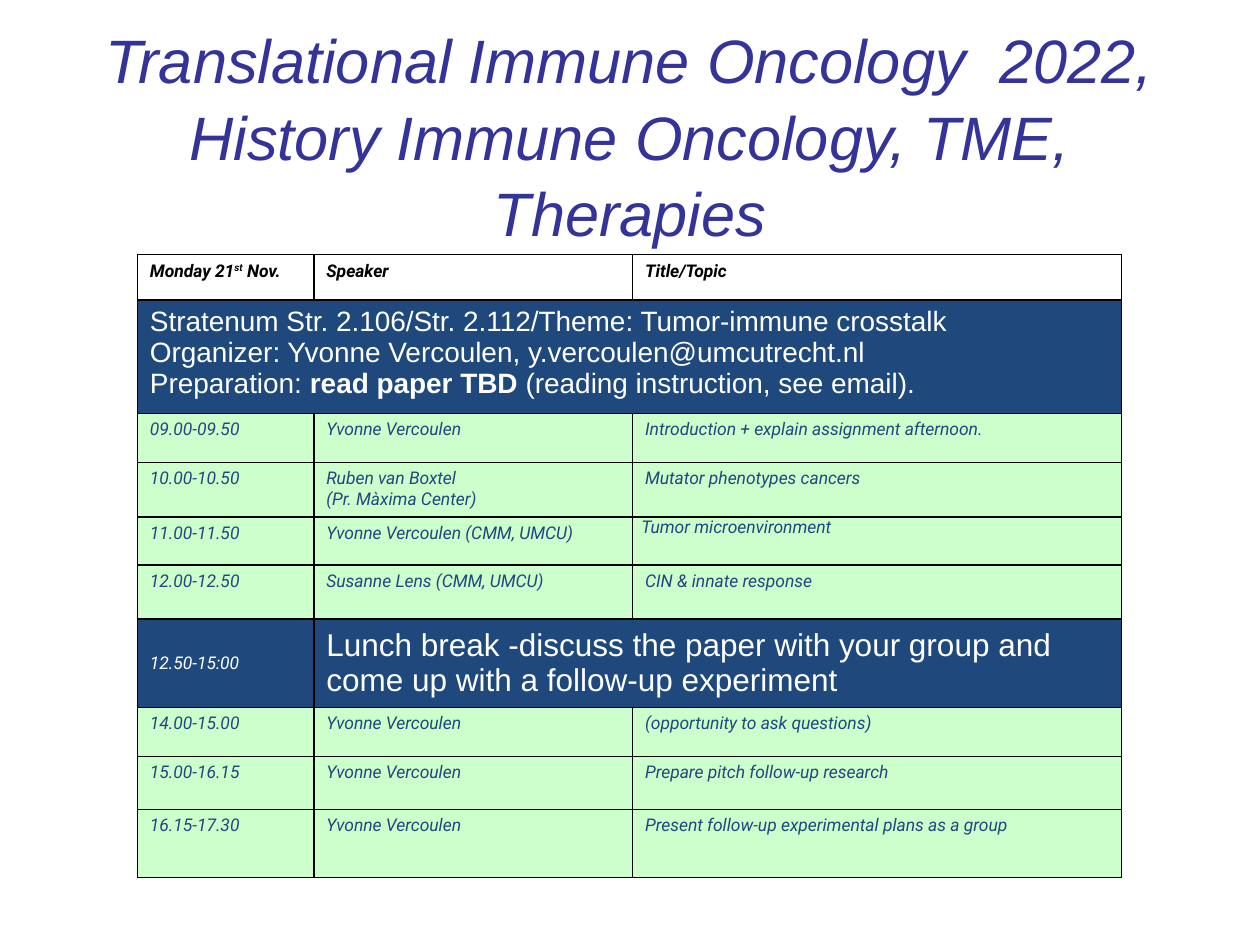
from lxml.etree import SubElement
from pptx import Presentation
from pptx.dml.color import RGBColor
from pptx.enum.text import MSO_ANCHOR as Anchor, PP_ALIGN as Align
from pptx.oxml.ns import qn
from pptx.util import Inches, Pt

BLUE, GREEN, WHITE, BLACK = "1F497D", "CCFFCC", "FFFFFF", "000000"
COLUMNS = [1.4, 2.53, 3.88]
ROWS = [0.36, 0.84, 0.39, 0.42, 0.38, 0.43, 0.66, 0.39, 0.42, 0.54]
HEADER = dict(size=10, font="Roboto", color=BLACK, bold=True, italic=True)
SESSION = dict(size=10, font="Roboto", color=BLUE, italic=True)
BREAK_TIME = dict(SESSION, color=WHITE)
THEME = dict(size=16, font="Arial", color=WHITE)
LUNCH = dict(THEME, size=18)

THEME_LINES = [
    ["Stratenum Str. 2.106/Str. 2.112/Theme: Tumor-immune crosstalk"],
    ["Organizer: Yvonne Vercoulen, y.vercoulen@umcutrecht.nl"],
    ["Preparation: ", ("read paper TBD ", {"bold": True}),
     "(reading instruction, see email)."],
]
HOST = "Yvonne Vercoulen"
SESSIONS = {
    2: ("09.00-09.50", HOST, "Introduction + explain assignment afternoon."),
    3: ("10.00-10.50", "Ruben van Boxtel\n(Pr. Màxima Center)",
        "Mutator phenotypes cancers"),
    4: ("11.00-11.50", "Yvonne Vercoulen (CMM, UMCU)", "Tumor microenvironment"),
    5: ("12.00-12.50", "Susanne Lens (CMM, UMCU)", "CIN & innate response"),
    7: ("14.00-15.00", HOST, "(opportunity to ask questions)"),
    8: ("15.00-16.15", HOST, "Prepare pitch follow-up research"),
    9: ("16.15-17.30", HOST, "Present follow-up experimental plans as a group"),
}


def rgb(color):
    return RGBColor.from_string(color)


def add_span(para, text, size, font, color, bold=False, italic=False, raised=False):
    span = para.add_run()
    span.text = text
    span.font.size, span.font.name = Pt(size), font
    span.font.bold, span.font.italic = bold, italic
    span.font.color.rgb = rgb(color)
    if raised:
        span.font._element.set("baseline", "30000")


def write(frame, lines, style):
    """Fill a text frame; each line lists plain strings or (text, style changes)."""
    for index, line in enumerate(lines):
        para = frame.add_paragraph() if index else frame.paragraphs[0]
        for part in line:
            text, changes = (part, {}) if isinstance(part, str) else part
            add_span(para, text, **{**style, **changes})


def draw_borders(cell):
    props = cell._tc.get_or_add_tcPr()
    for place, side in enumerate(("a:lnL", "a:lnR", "a:lnT", "a:lnB")):
        line = SubElement(props, qn(side), w=str(Pt(1)))
        SubElement(SubElement(line, qn("a:solidFill")), qn("a:srgbClr"), val=BLACK)
        props.insert(place, line)


def fill_cell(cell, lines, style, fill, anchor=Anchor.TOP, inset=(0.1, 0.05)):
    cell.fill.solid()
    cell.fill.fore_color.rgb = rgb(fill)
    cell.margin_left = cell.margin_right = Inches(inset[0])
    cell.margin_top = cell.margin_bottom = Inches(inset[1])
    cell.vertical_anchor = anchor
    write(cell.text_frame, lines, style)


def add_title(page, left, top, width, height):
    box = page.shapes.add_textbox(*map(Inches, (left, top, width, height)))
    frame = box.text_frame
    frame.word_wrap = True
    frame.vertical_anchor = Anchor.MIDDLE
    title = "Translational Immune Oncology  2022, History Immune Oncology, TME, Therapies"
    write(frame, [[title]], dict(size=35, font="Arial", color="333399", italic=True))
    frame.paragraphs[0].alignment = Align.CENTER
    frame.paragraphs[0].line_spacing = 1.04


def add_programme(page, left, top):
    table = page.shapes.add_table(
        len(ROWS), len(COLUMNS), Inches(left), Inches(top),
        Inches(sum(COLUMNS)), Inches(sum(ROWS))).table
    table.first_row = table.horz_banding = False
    for column, width in zip(table.columns, COLUMNS):
        column.width = Inches(width)
    for row, height in zip(table.rows, ROWS):
        row.height = Inches(height)

    headings = [["Monday 21", ("st", {"raised": True}), " Nov."],
                ["Speaker"], ["Title/Topic"]]
    for column, heading in enumerate(headings):
        fill_cell(table.cell(0, column), [heading], HEADER, WHITE)

    table.cell(1, 0).merge(table.cell(1, 2))
    fill_cell(table.cell(1, 0), THEME_LINES, THEME, BLUE)

    for row, texts in SESSIONS.items():
        for column, text in enumerate(texts):
            tight = (row, column) == (4, 2)
            fill_cell(table.cell(row, column), [[line] for line in text.split("\n")],
                      SESSION, GREEN, inset=(0.07, 0) if tight else (0.1, 0.05))

    table.cell(6, 1).merge(table.cell(6, 2))
    fill_cell(table.cell(6, 0), [["12.50-15:00"]], BREAK_TIME, BLUE, Anchor.MIDDLE)
    fill_cell(table.cell(6, 1), [["Lunch break -discuss the paper with your group and "
                                  "come up with a follow-up experiment"]],
              LUNCH, BLUE, Anchor.MIDDLE)

    for cell in table.iter_cells():
        draw_borders(cell)


def main():
    deck = Presentation()
    deck.slide_width, deck.slide_height = Inches(10), Inches(7.5)
    page = deck.slides.add_slide(deck.slide_layouts[6])
    add_title(page, 0.5, 0.44, 9, 1.25)
    add_programme(page, 1.09, 2.02)
    deck.save("out.pptx")


if __name__ == "__main__":
    main()
